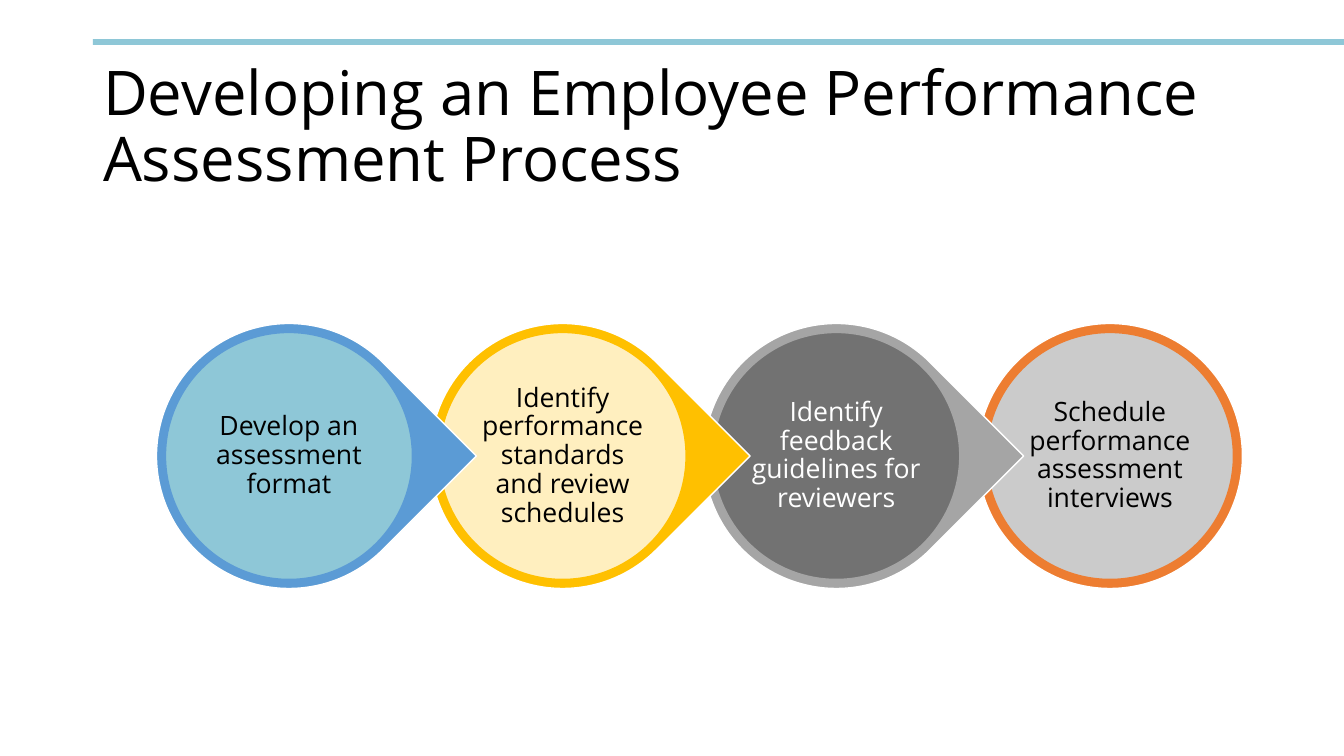
from lxml.etree import SubElement
from pptx import Presentation
from pptx.dml.color import RGBColor
from pptx.enum.shapes import MSO_SHAPE as Shape
from pptx.enum.text import MSO_ANCHOR as Anchor, MSO_AUTO_SIZE as AutoSize, PP_ALIGN as Align
from pptx.oxml.ns import qn
from pptx.util import Emu, Pt

FONT = "Open Sans"
BLACK = RGBColor(0x00, 0x00, 0x00)
WHITE = RGBColor(0xFF, 0xFF, 0xFF)
TEAL = RGBColor(0x8E, 0xC7, 0xD7)
BLUE = RGBColor(0x5B, 0x9B, 0xD5)
GOLD = RGBColor(0xFF, 0xC0, 0x00)
GREY = RGBColor(0xA5, 0xA5, 0xA5)
DARK_GREY = RGBColor(0x72, 0x72, 0x72)
LIGHT_GREY = RGBColor(0xCB, 0xCB, 0xCB)
ORANGE = RGBColor(0xED, 0x7D, 0x31)

TITLE = "Developing an Employee Performance Assessment Process"
# wording, outer colour, disc colour, disc opacity in percent, text colour
STEPS = [
    ("Develop an assessment format", BLUE, TEAL, 100, BLACK),
    ("Identify performance standards and review schedules", GOLD, WHITE, 75, BLACK),
    ("Identify feedback guidelines for reviewers", GREY, DARK_GREY, 100, WHITE),
    ("Schedule performance assessment interviews", ORANGE, LIGHT_GREY, 100, BLACK),
]

SLIDE_W, SLIDE_H = 1344, 756
FIRST_X, LAST_X, CENTER_Y = 289, 1110, 456
OUTER, DISC, INSET = 265, 247, 2


def px(length):
    return Emu(round(length * 914400 / 100.8))


def add_filled(kind, left, top, width, height, fill, line=None):
    shape = slide.shapes.add_shape(kind, px(left), px(top), px(width), px(height))
    shape.shadow.inherit = False
    shape.fill.solid()
    shape.fill.fore_color.rgb = fill
    if line is None:
        shape.line.fill.background()
    else:
        shape.line.color.rgb = line
        shape.line.width = Pt(1)
    return shape


def add_centered(kind, center_x, size, fill, line):
    """Add a square-framed shape centred on the row of steps."""
    return add_filled(kind, center_x - size / 2, CENTER_Y - size / 2, size, size, fill, line)


def write(frame, text, size, color, align):
    frame.text = text
    frame.word_wrap = True
    frame.auto_size = AutoSize.NONE
    frame.vertical_anchor = Anchor.MIDDLE
    paragraph = frame.paragraphs[0]
    paragraph.alignment = align
    paragraph.line_spacing = 0.9
    paragraph.font.name = FONT
    paragraph.font.size = Pt(size)
    paragraph.font.color.rgb = color


def set_opacity(shape, percent):
    color = shape.fill._xPr.find(qn("a:solidFill"))[0]
    SubElement(color, qn("a:alpha")).set("val", str(percent * 1000))


presentation = Presentation()
presentation.slide_width, presentation.slide_height = px(SLIDE_W), px(SLIDE_H)
slide = presentation.slides.add_slide(presentation.slide_layouts[5])

add_filled(Shape.RECTANGLE, 93, 39, SLIDE_W - 93, 6, TEAL)

title = slide.shapes.title
title.left, title.top, title.width, title.height = px(93), px(40), px(1159), px(177)
write(title.text_frame, TITLE, 44, BLACK, Align.LEFT)

last = len(STEPS) - 1
pitch = (LAST_X - FIRST_X) / last
# Last step first, so that each pointer overlaps the step after it
for index, (wording, outer_color, disc_color, opacity, text_color) in reversed(list(enumerate(STEPS))):
    center_x = FIRST_X + index * pitch
    if index == last:
        add_centered(Shape.OVAL, center_x, OUTER, outer_color, WHITE)
    else:
        pointer = add_centered(Shape.TEAR, center_x, OUTER, outer_color, WHITE)
        pointer.rotation = 45

    disc = add_centered(Shape.OVAL, center_x, DISC, disc_color, outer_color)
    if opacity < 100:
        set_opacity(disc, opacity)
    frame = disc.text_frame
    frame.margin_left = frame.margin_right = frame.margin_top = frame.margin_bottom = px(INSET)
    write(frame, wording, 19, text_color, Align.CENTER)

presentation.save("out.pptx")
